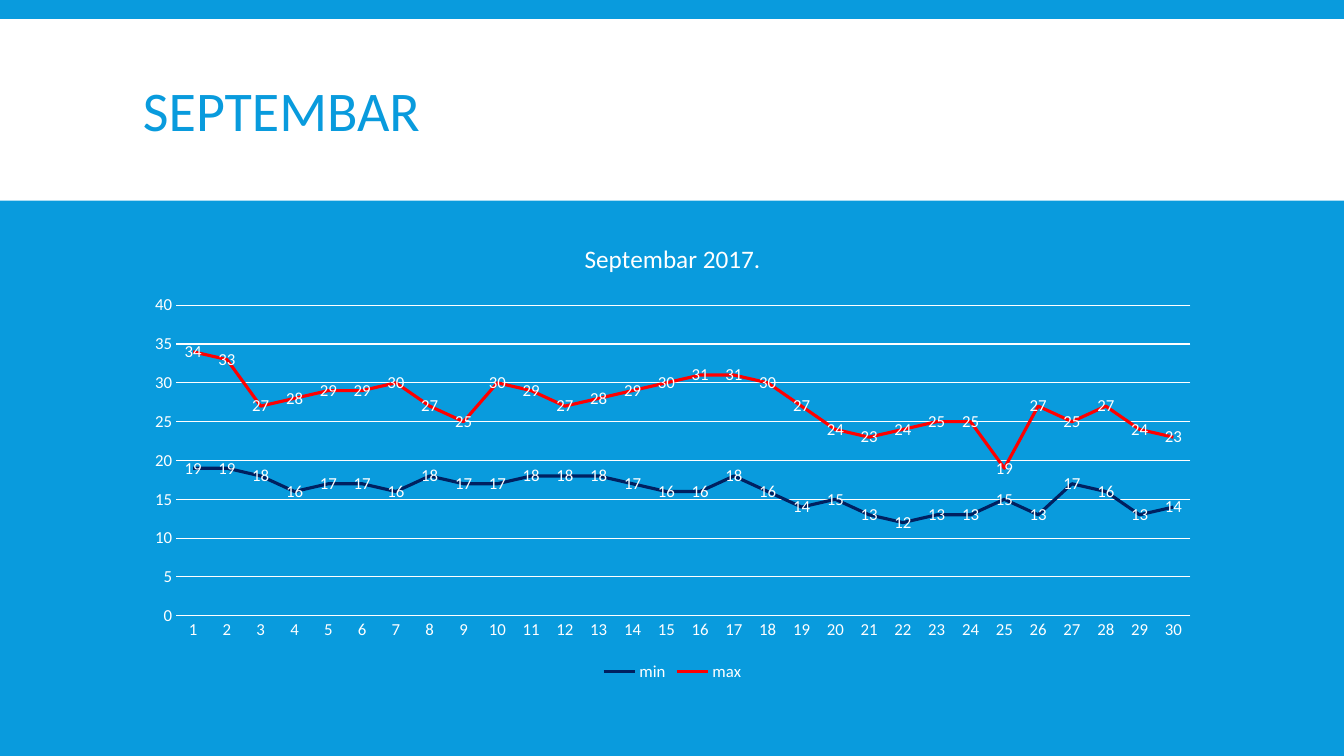
from lxml import etree
from pptx import Presentation
from pptx.chart.data import CategoryChartData
from pptx.dml.color import RGBColor
from pptx.enum.chart import XL_CHART_TYPE as ChartType
from pptx.enum.chart import XL_LABEL_POSITION as LabelPos
from pptx.enum.chart import XL_LEGEND_POSITION as LegendPos
from pptx.enum.chart import XL_TICK_MARK as TickMark
from pptx.enum.shapes import MSO_SHAPE
from pptx.enum.text import MSO_ANCHOR
from pptx.oxml.ns import qn
from pptx.util import Inches, Pt

COLORS = {"blue": "099BDD", "white": "FFFFFF", "navy": "002060", "red": "FF0000"}
FONT = "Calibri"
MIN_TEMPS = [19, 19, 18, 16, 17, 17, 16, 18, 17, 17, 18, 18, 18, 17, 16,
             16, 18, 16, 14, 15, 13, 12, 13, 13, 15, 13, 17, 16, 13, 14]
MAX_TEMPS = [34, 33, 27, 28, 29, 29, 30, 27, 25, 30, 29, 27, 28, 29, 30,
             31, 31, 30, 27, 24, 23, 24, 25, 25, 19, 27, 25, 27, 24, 23]


def rgb(name):
    return RGBColor.from_string(COLORS[name])


def style_font(font, size, color="white"):
    font.name = FONT
    font.size = Pt(size)
    font.bold = False
    font.color.rgb = rgb(color)


def style_line(line, color, width):
    line.color.rgb = rgb(color)
    line.width = Pt(width)


def add_band(s, x, y, w, h, color):
    sp = s.shapes.add_shape(MSO_SHAPE.RECTANGLE, Inches(x), Inches(y), Inches(w), Inches(h))
    sp.shadow.inherit = False
    sp.fill.solid()
    sp.fill.fore_color.rgb = rgb(color)
    sp.line.fill.background()


def add_heading(s, text, x, y, w, h):
    tf = s.shapes.add_textbox(Inches(x), Inches(y), Inches(w), Inches(h)).text_frame
    tf.word_wrap = True
    tf.vertical_anchor = MSO_ANCHOR.MIDDLE
    p = tf.paragraphs[0]
    p.text = text
    p.line_spacing = 0.85
    style_font(p.runs[0].font, 40, "blue")


def set_plot_layout(chart, x, y, w, h):
    plot_area = chart._chartSpace.chart.plotArea
    layout = plot_area.find(qn("c:layout"))
    if layout is None:
        layout = etree.Element(qn("c:layout"))
        plot_area.insert(0, layout)
    manual = etree.SubElement(layout, qn("c:manualLayout"))
    settings = {"layoutTarget": "inner", "xMode": "edge", "yMode": "edge",
                "x": x, "y": y, "w": w, "h": h}
    for tag, value in settings.items():
        etree.SubElement(manual, qn(f"c:{tag}")).set("val", str(value))


def style_axes(chart):
    for axis in (chart.category_axis, chart.value_axis):
        axis.major_tick_mark = TickMark.NONE
        axis.minor_tick_mark = TickMark.NONE
        style_font(axis.tick_labels.font, 12)
    style_line(chart.category_axis.format.line, "white", 0.75)
    values = chart.value_axis
    values.minimum_scale, values.maximum_scale, values.major_unit = 0, 40, 5
    values.format.line.fill.background()
    style_line(values.major_gridlines.format.line, "white", 0.75)


def style_series(series, color):
    series.smooth = False
    style_line(series.format.line, color, 2.25)
    labels = series.data_labels
    labels.show_value = True
    labels.position = LabelPos.CENTER
    style_font(labels.font, 12)


def add_temperature_chart(s, title, x, y, w, h):
    data = CategoryChartData()
    data.categories = [str(day) for day in range(1, len(MIN_TEMPS) + 1)]
    data.add_series("min", MIN_TEMPS)
    data.add_series("max", MAX_TEMPS)
    chart = s.shapes.add_chart(ChartType.LINE, Inches(x), Inches(y),
                               Inches(w), Inches(h), data).chart
    style_font(chart.font, 10)
    chart.has_title = True
    p = chart.chart_title.text_frame.paragraphs[0]
    p.text = title
    style_font(p.runs[0].font, 18)
    chart.chart_title.include_in_layout = False
    chart.has_legend = True
    chart.legend.position = LegendPos.BOTTOM
    chart.legend.include_in_layout = False
    style_font(chart.legend.font, 12)
    style_axes(chart)
    plot = chart.plots[0]
    plot.vary_by_categories = False
    for series, color in zip(plot.series, ("navy", "red")):
        style_series(series, color)
    set_plot_layout(chart, 0.04, 0.18, 0.94, 0.67)


def main():
    prs = Presentation()
    prs.slide_width, prs.slide_height = Inches(13.33), Inches(7.5)
    s = prs.slides.add_slide(prs.slide_layouts[6])
    s.background.fill.solid()
    s.background.fill.fore_color.rgb = rgb("blue")
    add_band(s, 0, 0.19, 13.33, 1.8, "white")
    add_heading(s, "SEPTEMBAR", 1.32, 0.31, 10.7, 1.65)
    add_temperature_chart(s, "Septembar 2017.", 1.32, 2.2, 10.7, 4.6)
    prs.save("out.pptx")


if __name__ == "__main__":
    main()
